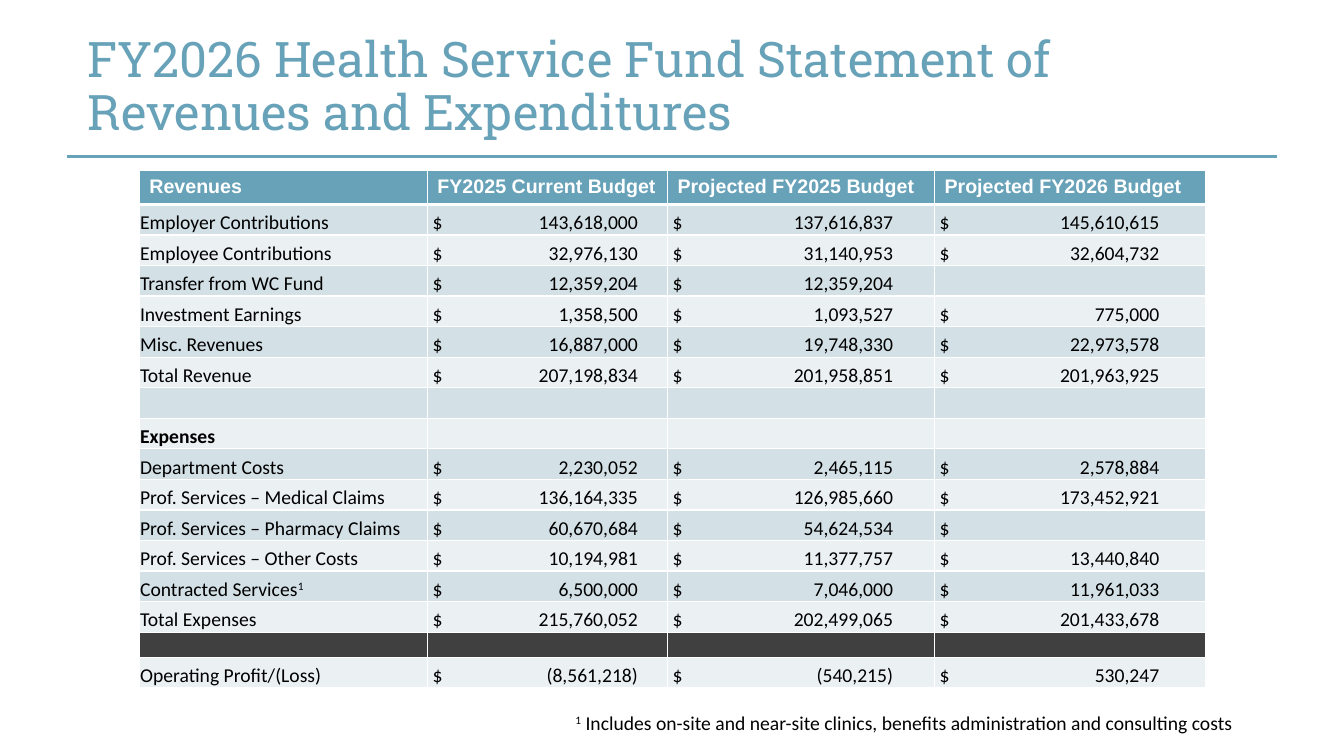
from lxml import etree
from pptx import Presentation
from pptx import util as u
from pptx.dml.color import RGBColor
from pptx.enum import shapes, text
from pptx.oxml.ns import qn

HUES = {"teal": "67A2B9", "band": "D3E0E6", "pale": "EBF0F3",
        "dark": "404040", "white": "FFFFFF", "black": "000000"}
SIDES = ("a:lnL", "a:lnR", "a:lnT", "a:lnB")

HEADS = ("Revenues", "FY2025 Current Budget",
         "Projected FY2025 Budget", "Projected FY2026 Budget")
# None leaves a cell blank; an empty string shows the dollar sign alone
ROWS = [
    ("Employer Contributions", "143,618,000", "137,616,837", "145,610,615"),
    ("Employee Contributions", "32,976,130", "31,140,953", "32,604,732"),
    ("Transfer from WC Fund", "12,359,204", "12,359,204", None),
    ("Investment Earnings", "1,358,500", "1,093,527", "775,000"),
    ("Misc. Revenues", "16,887,000", "19,748,330", "22,973,578"),
    ("Total Revenue", "207,198,834", "201,958,851", "201,963,925"),
    (None,) * 4,
    ("Expenses", None, None, None),
    ("Department Costs", "2,230,052", "2,465,115", "2,578,884"),
    ("Prof. Services – Medical Claims", "136,164,335", "126,985,660", "173,452,921"),
    ("Prof. Services – Pharmacy Claims", "60,670,684", "54,624,534", ""),
    ("Prof. Services – Other Costs", "10,194,981", "11,377,757", "13,440,840"),
    ("Contracted Services", "6,500,000", "7,046,000", "11,961,033"),
    ("Total Expenses", "215,760,052", "202,499,065", "201,433,678"),
    (None,) * 4,
    ("Operating Profit/(Loss)", "(8,561,218)", "(540,215)", "530,247"),
]
SPACER = 15
WIDTHS = (7.26, 6.05, 6.73, 6.83)
TABS = (None, 5.18, 5.56, 5.54)


class Deck:
    def __init__(self):
        self.prs = Presentation()
        self.prs.slide_width, self.prs.slide_height = u.Cm(33.87), u.Cm(19.05)
        self.slide = self.prs.slides.add_slide(self.prs.slide_layouts[5])
        self.font, self.size = "Calibri", 14

    def color(self, name):
        return RGBColor.from_string(HUES[name])

    def style(self, run, hue="black", font=None, size=None, bold=False):
        run.font.name = font or self.font
        run.font.size = u.Pt(size or self.size)
        run.font.bold = bold
        run.font.color.rgb = self.color(hue)

    def raised(self, para, mark):
        run = para.add_run()
        run.text = mark
        self.style(run)
        run.font._element.set("baseline", "30000")

    def title(self, words, x, y, w, h):
        box = self.slide.shapes.title
        box.left, box.top, box.width, box.height = map(u.Cm, (x, y, w, h))
        frame = box.text_frame
        frame.text = words
        frame.word_wrap = True
        frame.auto_size = text.MSO_AUTO_SIZE.NONE
        frame.vertical_anchor = text.MSO_ANCHOR.MIDDLE
        frame.margin_left = frame.margin_right = u.Cm(0.33)
        frame.margin_top = frame.margin_bottom = u.Cm(0.17)
        para = frame.paragraphs[0]
        para.alignment = text.PP_ALIGN.LEFT
        para.line_spacing = 0.9
        self.style(para.runs[0], "teal", "Roboto Slab", 35)

    def rule(self, x, y, end):
        line = self.slide.shapes.add_connector(
            shapes.MSO_CONNECTOR.STRAIGHT, u.Cm(x), u.Cm(y), u.Cm(end), u.Cm(y))
        line.line.color.rgb = self.color("teal")
        line.line.width = u.Pt(2)
        etree.SubElement(line._element.spPr, qn("a:effectLst"))

    def borders(self, cell, head):
        props = cell._tc.get_or_add_tcPr()
        for spot, side in enumerate(SIDES):
            wide = 3 if head and side == "a:lnB" else 1
            edge = etree.Element(qn(side), w=str(u.Pt(wide)))
            fill = etree.SubElement(edge, qn("a:solidFill"))
            etree.SubElement(fill, qn("a:srgbClr"), val=HUES["white"])
            props.insert(spot, edge)

    def cell(self, cell, words, hue, tab=None, head=False):
        cell.fill.solid()
        cell.fill.fore_color.rgb = self.color(hue)
        self.borders(cell, head)
        para = cell.text_frame.paragraphs[0]
        if not head:
            cell.vertical_anchor = text.MSO_ANCHOR.BOTTOM
            cell.margin_left = u.Cm(0.13 if tab else 0.02)
            cell.margin_top = cell.margin_right = u.Cm(0.02)
            cell.margin_bottom = 0
        if words is None:
            etree.SubElement(para._p, qn("a:endParaRPr"), sz=str(self.size * 100))
            return
        if tab:
            stops = etree.SubElement(para._p.get_or_add_pPr(), qn("a:tabLst"))
            etree.SubElement(stops, qn("a:tab"), pos=str(u.Cm(tab)), algn="r")
            words = f"$\t{words}" if words else "$"
        para.text = words
        if head:
            self.style(para.runs[0], "white", "Arial", bold=True)
        else:
            self.style(para.runs[0], bold=words == "Expenses")
        if words == "Contracted Services":
            self.raised(para, "1")

    def table(self, x, y):
        count = len(ROWS) + 1
        grid = self.slide.shapes.add_table(
            count, len(HEADS), u.Cm(x), u.Cm(y),
            u.Cm(sum(WIDTHS)), u.Cm(13)).table
        for col, wide in zip(grid.columns, WIDTHS):
            col.width = u.Cm(wide)
        for r, row in enumerate([HEADS, *ROWS]):
            head = r == 0
            tall = {0: 0.86, SPACER: 0.63}.get(r, 0.77)
            hue = {0: "teal", SPACER: "dark"}.get(r, "band" if r % 2 else "pale")
            grid.rows[r].height = u.Cm(tall)
            for c, words in enumerate(row):
                self.cell(grid.cell(r, c), words, hue,
                          None if head else TABS[c], head)

    def note(self, mark, words, x, y, w, h):
        box = self.slide.shapes.add_textbox(*map(u.Cm, (x, y, w, h)))
        box.text_frame.word_wrap = False
        para = box.text_frame.paragraphs[0]
        self.raised(para, mark)
        run = para.add_run()
        run.text = words
        self.style(run)


def main():
    deck = Deck()
    # Heading
    deck.rule(1.7, 3.94, 32.18)
    deck.title("FY2026 Health Service Fund Statement of Revenues and Expenditures",
               1.88, 0.38, 30.4, 3.66)
    # Statement
    deck.table(3.51, 4.29)
    # Footnote
    deck.note("1", " Includes on-site and near-site clinics, benefits "
              "administration and consulting costs", 14.25, 17.78, 17.48, 0.86)
    deck.prs.save("out.pptx")


if __name__ == "__main__":
    main()
